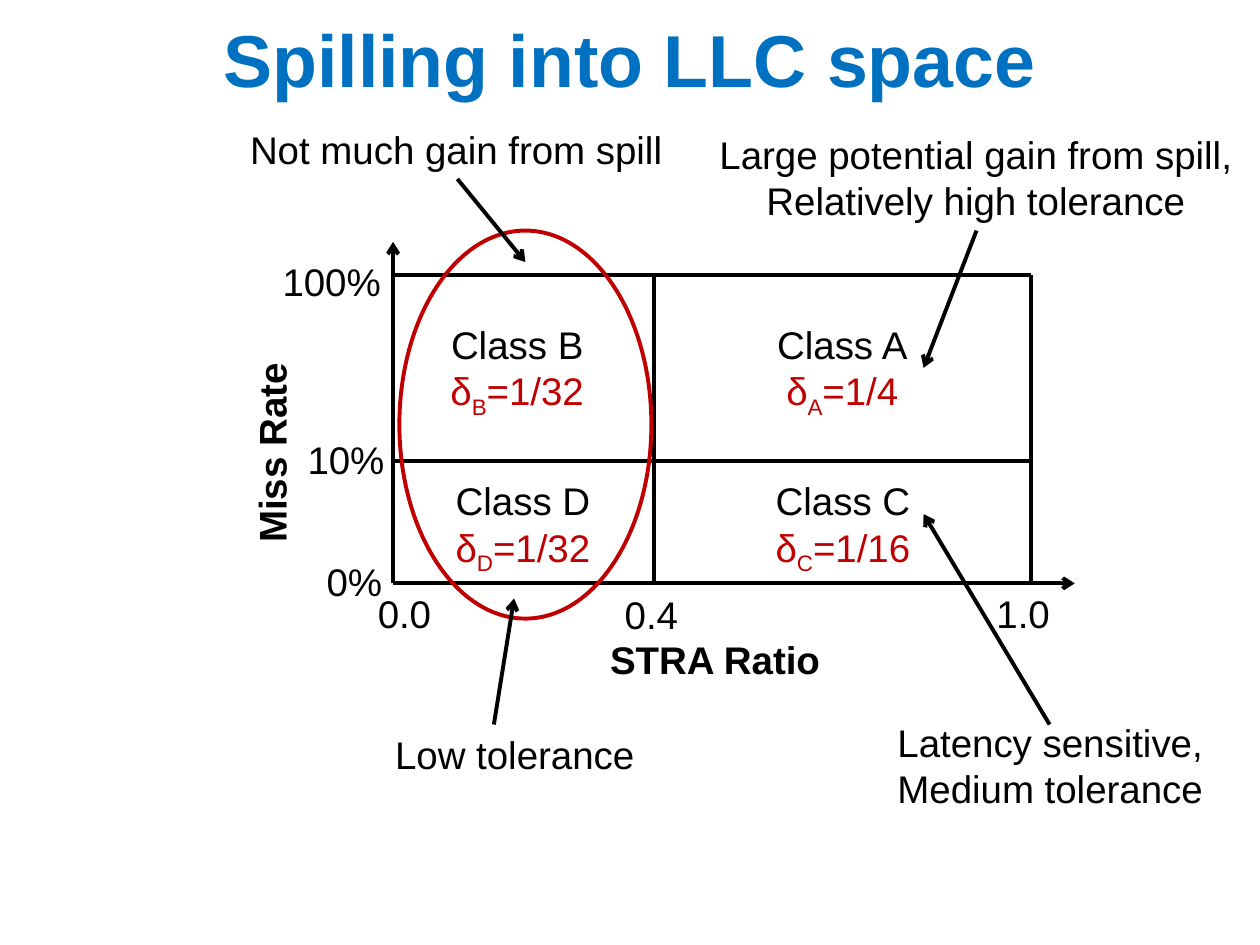
"""Build the slide on spilling into LLC space, with its four classes by miss rate and STRA ratio."""
from dataclasses import dataclass

from lxml.etree import SubElement
from pptx import Presentation
from pptx.dml.color import RGBColor
from pptx.enum.shapes import MSO_CONNECTOR, MSO_SHAPE
from pptx.enum.text import MSO_ANCHOR as Anchor, PP_ALIGN as Align
from pptx.oxml.ns import qn
from pptx.util import Inches, Pt

BLACK, RED, BLUE = "000000", "C00000", "0070C0"
LINE_WIDTH = Pt(2.25)
LEFT, SPLIT, RIGHT = 3.12, 5.19, 8.18
TOP, MIDDLE, BOTTOM = 2.18, 3.66, 4.63
ONE_LINE, TWO_LINES = 0.47, 0.84


@dataclass(frozen=True)
class ClassCell:
    name: str
    delta: str
    left: float
    top: float
    width: float


@dataclass(frozen=True)
class Label:
    lines: tuple[str, ...]
    left: float
    top: float
    width: float
    height: float = ONE_LINE
    align: Align = Align.CENTER
    bold: bool = False
    vertical: bool = False


@dataclass(frozen=True)
class Segment:
    start: tuple[float, float]
    end: tuple[float, float]
    arrow: bool = False


CLASSES = (
    ClassCell("D", "1/32", 3.14, 3.74, 2.02),
    ClassCell("C", "1/16", 5.58, 3.74, 2.22),
    ClassCell("B", "1/32", 3.17, 2.5, 1.87),
    ClassCell("A", "1/4", 5.7, 2.5, 1.97),
)
AXIS_LABELS = (
    Label(("Miss Rate",), 1.92, 2.17, 0.57, 2.85, bold=True, vertical=True),
    Label(("100%",), 2.04, 2, 1.08, align=Align.RIGHT),
    Label(("10%",), 2.15, 3.41, 1, align=Align.RIGHT),
    Label(("0%",), 2.34, 4.38, 0.79, align=Align.RIGHT),
    Label(("STRA Ratio",), 2.6, 5, 6.15, bold=True),
    Label(("0.4",), 4.69, 4.64, 0.79, align=Align.RIGHT),
    Label(("1.0",), 7.64, 4.63, 0.79, align=Align.RIGHT),
    Label(("0.0",), 2.73, 4.63, 0.79, align=Align.RIGHT),
)
NOTES = (
    Label(("Large potential gain from spill,", "Relatively high tolerance"),
          5.58, 0.99, 4.33, TWO_LINES),
    Label(("Latency sensitive,", "Medium tolerance"), 6.92, 5.66, 2.83, TWO_LINES),
    Label(("Not much gain from spill",), 1.83, 0.95, 3.58),
    Label(("Low tolerance",), 3, 5.75, 2.17),
)
GRID = (
    Segment((LEFT, BOTTOM), (LEFT, 1.92), arrow=True),
    Segment((LEFT, BOTTOM), (8.53, BOTTOM), arrow=True),
    Segment((LEFT, MIDDLE), (RIGHT, MIDDLE)),
    Segment((SPLIT, BOTTOM), (SPLIT, TOP)),
    Segment((LEFT, TOP), (RIGHT, TOP)),
    Segment((RIGHT, BOTTOM), (RIGHT, TOP)),
)
POINTERS = (
    Segment((7.75, 1.83), (7.33, 2.92), arrow=True),
    Segment((8.33, 5.75), (7.33, 4.08), arrow=True),
    Segment((3.63, 1.42), (4.17, 2.08), arrow=True),
    Segment((3.92, 5.75), (4.08, 4.75), arrow=True),
)


def rgb(color: str) -> RGBColor:
    return RGBColor.from_string(color)


def write(paragraph, text: str, *, size: float = 22, color: str = BLACK,
          bold: bool = False, subscript: bool = False, align: Align = Align.CENTER) -> None:
    paragraph.alignment = align
    run = paragraph.add_run()
    run.text = text
    font = run.font
    font.name, font.size, font.bold = "Arial", Pt(size), bold
    font.color.rgb = rgb(color)
    if subscript:
        run._r.get_or_add_rPr().set("baseline", "-25000")


def add_frame(slide, left: float, top: float, width: float, height: float):
    frame = slide.shapes.add_textbox(
        Inches(left), Inches(top), Inches(width), Inches(height)).text_frame
    frame.word_wrap = True
    return frame


def draw_title(slide, text: str) -> None:
    title = slide.shapes.title
    title.left, title.top, title.width, title.height = 0, 0, Inches(10), Inches(0.92)
    title.text_frame.vertical_anchor = Anchor.MIDDLE
    write(title.text_frame.paragraphs[0], text, size=42, color=BLUE, bold=True)


def draw_class(slide, cell: ClassCell) -> None:
    frame = add_frame(slide, cell.left, cell.top, cell.width, TWO_LINES)
    write(frame.paragraphs[0], f"Class {cell.name}")
    threshold = frame.add_paragraph()
    write(threshold, "δ", color=RED)
    write(threshold, cell.name, color=RED, subscript=True)
    write(threshold, f"={cell.delta}", color=RED)


def draw_label(slide, label: Label) -> None:
    frame = add_frame(slide, label.left, label.top, label.width, label.height)
    if label.vertical:
        frame._txBody.bodyPr.set("vert", "vert270")
    for index, line in enumerate(label.lines):
        paragraph = frame.add_paragraph() if index else frame.paragraphs[0]
        write(paragraph, line, bold=label.bold, align=label.align)


def draw_segment(slide, segment: Segment) -> None:
    ends = [Inches(value) for value in segment.start + segment.end]
    connector = slide.shapes.add_connector(MSO_CONNECTOR.STRAIGHT, *ends)
    connector.line.color.rgb = rgb(BLACK)
    connector.line.width = LINE_WIDTH
    if segment.arrow:
        SubElement(connector.line._get_or_add_ln(), qn("a:tailEnd"), type="arrow")
    SubElement(connector._element.spPr, qn("a:effectLst"))


def draw_low_gain_ring(slide) -> None:
    ring = slide.shapes.add_shape(
        MSO_SHAPE.OVAL, Inches(3.17), Inches(1.83), Inches(2), Inches(3.08))
    ring.shadow.inherit = False
    ring.fill.background()
    ring.line.color.rgb = rgb(RED)
    ring.line.width = LINE_WIDTH


def main() -> None:
    deck = Presentation()
    deck.slide_width, deck.slide_height = Inches(10), Inches(7.5)
    slide = deck.slides.add_slide(deck.slide_layouts.get_by_name("Title Only"))
    draw_title(slide, "Spilling into LLC space")
    for cell in CLASSES:
        draw_class(slide, cell)
    for segment in GRID:
        draw_segment(slide, segment)
    for label in AXIS_LABELS + NOTES:
        draw_label(slide, label)
    draw_low_gain_ring(slide)
    for pointer in POINTERS:
        draw_segment(slide, pointer)
    deck.save("out.pptx")


if __name__ == "__main__":
    main()
